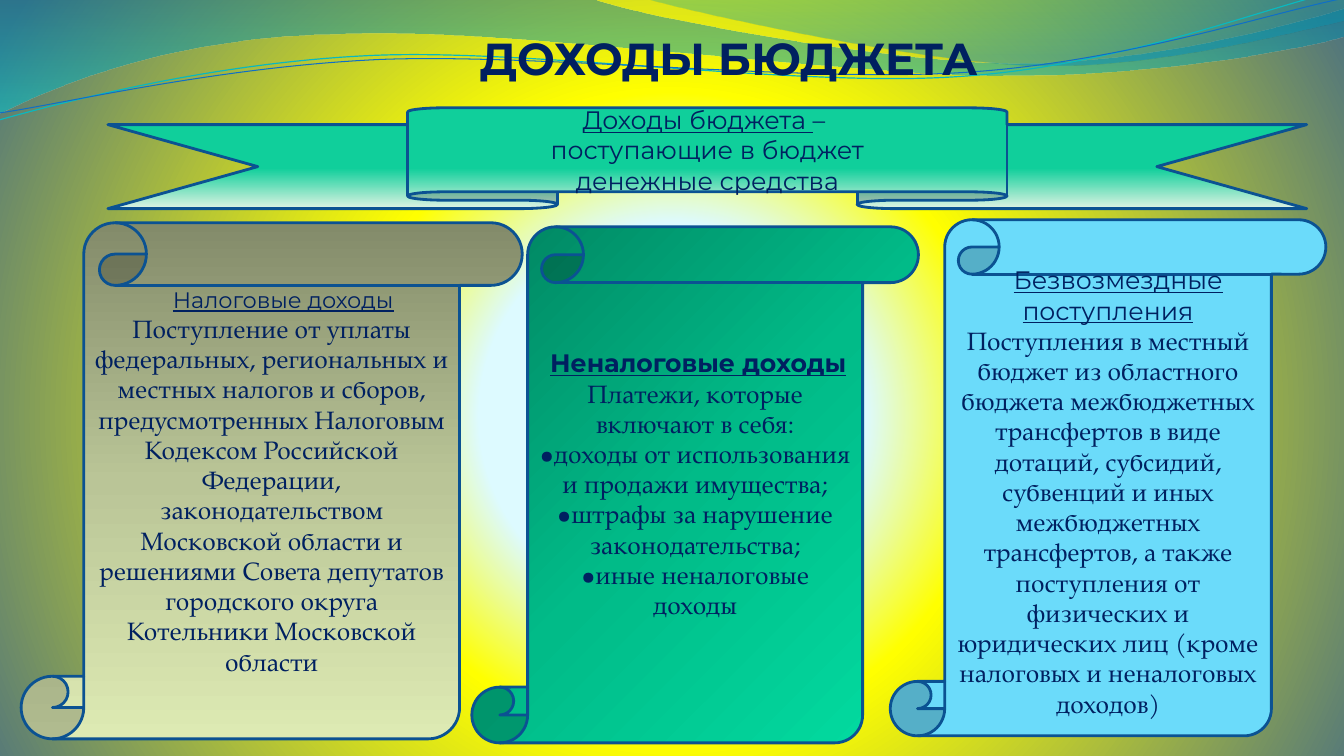
from dataclasses import dataclass
from typing import Optional

import lxml.etree
import pptx
import pptx.dml.color
import pptx.enum.shapes
import pptx.enum.text
import pptx.oxml
import pptx.oxml.ns
import pptx.util

Inches = pptx.util.Inches
SHAPES = pptx.enum.shapes.MSO_SHAPE
ALIGN = pptx.enum.text.PP_ALIGN
ANCHOR = pptx.enum.text.MSO_ANCHOR
qn = pptx.oxml.ns.qn

COLORS = {"navy": "002060", "outline": "0B5292", "sky": "6BDBFA",
          "teal_line": "0AB8BF", "blue_line": "0F6FC6"}
HEADING_FONT = "Montserrat"
BODY_FONT = "TeX Gyre Pagella"

Point = tuple[float, float]


@dataclass
class Stop:
    position: int
    color: str
    alpha: int = 100


@dataclass
class Wave:
    start: Point
    segments: list[tuple[float, ...]]  # two numbers: line; six: Bezier curve
    stops: Optional[list[Stop]] = None
    line: str = ""
    width: float = 0


@dataclass
class Span:
    text: str
    underline: bool = False


@dataclass
class Para:
    spans: list[Span]
    font: str = BODY_FONT
    size: int = 18
    bold: bool = False
    indent: float = 0


@dataclass
class Panel:
    preset: SHAPES
    place: tuple[float, float, float, float]
    paras: list[Para]
    stops: Optional[list[Stop]] = None
    angle: int = 90
    fill: str = ""
    bottom_inset: float = 0.05


WAVES = [
    Wave((0, 0), [(5.87, -0.01), (6.34, 0.17, 8.85, 0.63, 10.11, 0.63),
                  (11.38, 0.63, 12.78, 0.26, 13.33, 0.09), (13.35, 0.36),
                  (13.11, 0.44, 11.6, 0.76, 9.94, 0.75),
                  (8.29, 0.75, 5.09, 0.28, 3.43, 0.34),
                  (1.72, 0.36, 0.61, 0.83, -0.01, 1.13), (0, 0)],
         [Stop(0, "0074A1", 45), Stop(100, "00C6CF", 55)]),
    Wave((6.39, -0.01), [(6.79, 0.11, 9.09, 0.62, 10.25, 0.65),
                         (11.41, 0.69, 12.82, 0.32, 13.33, 0.21), (13.33, 0),
                         (6.39, -0.01)],
         [Stop(0, "00A1A9", 30), Stop(80, "008BBF", 45)]),
    Wave((-0.01, 1.19), [(0.64, 1.01, 2.11, 0.62, 3.69, 0.55),
                         (5.27, 0.48, 7.9, 0.87, 9.5, 0.76),
                         (11.1, 0.66, 12.52, 0.08, 13.31, -0.1)],
         line="teal_line", width=0.85),
    Wave((0, 1.12), [(0.63, 1.03, 2.18, 0.66, 3.78, 0.59),
                     (5.37, 0.53, 7.96, 0.82, 9.55, 0.72),
                     (11.15, 0.62, 12.55, 0.14, 13.34, -0.02)],
         line="blue_line", width=0.75),
]

PANELS = [
    Panel(SHAPES.UP_RIBBON, (1.07, 1.07, 11.89, 1),
          [Para([Span("Доходы бюджета ", True), Span("– ")], HEADING_FONT),
           Para([Span("поступающие в бюджет")], HEADING_FONT),
           Para([Span("денежные средства")], HEADING_FONT)],
          [Stop(0, "10CF9B"), Stop(60, "10CF9B"), Stop(100, "DFF3E3")]),
    Panel(SHAPES.VERTICAL_SCROLL, (0.21, 2.21, 4.97, 5.12),
          [Para([Span("Налоговые доходы", True)], HEADING_FONT, 16, indent=0.23),
           Para([Span("Поступление от уплаты федеральных, региональных и местных "
                      "налогов и сборов, предусмотренных Налоговым Кодексом "
                      "Российской Федерации, законодательством Московской области "
                      "и решениями Совета депутатов городского округа Котельники "
                      "Московской области")])],
          [Stop(0, "838B6A"), Stop(50, "BAC597"), Stop(100, "DDEAB3")],
          bottom_inset=0.35),
    Panel(SHAPES.VERTICAL_SCROLL, (4.68, 2.25, 4.43, 5.12),
          [Para([Span("Неналоговые доходы", True)], HEADING_FONT, bold=True,
                indent=0.06),
           Para([Span("Платежи, которые включают в себя:")]),
           Para([Span("•доходы от использования и продажи имущества;")]),
           Para([Span("•штрафы за нарушение законодательства;")]),
           Para([Span("•иные неналоговые доходы")])],
          [Stop(0, "018360"), Stop(50, "01BB88"), Stop(100, "02DDA2")],
          angle=45, bottom_inset=0.35),
    Panel(SHAPES.VERTICAL_SCROLL, (8.83, 2.18, 4.32, 5.12),
          [Para([Span("Безвозмездные поступления", True)], HEADING_FONT, indent=0.2),
           Para([Span("Поступления в местный бюджет из областного бюджета "
                      "межбюджетных трансфертов в виде дотаций, субсидий, субвенций "
                      "и иных межбюджетных трансфертов, а также поступления от "
                      "физических и юридических лиц (кроме налоговых и неналоговых "
                      "доходов)")])],
          fill="sky"),
]


def rgb(name: str) -> pptx.dml.color.RGBColor:
    return pptx.dml.color.RGBColor.from_string(COLORS[name])


def set_gradient(owner, fill, stops: list[Stop], angle: Optional[int] = None) -> None:
    """Fill with the stops: linear at a clockwise angle, or circular without one."""
    fill.gradient()
    stop_xml = "".join(
        f'<a:gs pos="{stop.position * 1000}"><a:srgbClr val="{stop.color}">'
        f'<a:alpha val="{stop.alpha * 1000}"/></a:srgbClr></a:gs>' for stop in stops)
    if angle is None:
        shade = ('<a:path path="circle"><a:fillToRect l="10000" t="110000" '
                 'r="10000" b="100000"/></a:path>')
    else:
        shade = f'<a:lin ang="{angle * 60000}" scaled="0"/>'
    gradient = pptx.oxml.parse_xml(
        f'<a:gradFill {pptx.oxml.ns.nsdecls("a")} rotWithShape="1">'
        f'<a:gsLst>{stop_xml}</a:gsLst>{shade}</a:gradFill>')
    present = owner.element.find(".//" + qn("a:gradFill"))
    present.getparent().replace(present, gradient)


def bend_segments(shape, segments: list[tuple[float, ...]]) -> None:
    """Join each three lines that stand for a curve into one Bezier segment."""
    lines = iter(shape.element.findall(".//" + qn("a:lnTo")))
    for segment in segments:
        first = next(lines)
        if len(segment) == 6:
            first.tag = qn("a:cubicBezTo")
            for line in (next(lines), next(lines)):
                first.append(line[0])
                line.getparent().remove(line)


def draw_wave(slide, wave: Wave) -> None:
    corners = [(Inches(segment[i]), Inches(segment[i + 1]))
               for segment in wave.segments for i in range(0, len(segment), 2)]
    builder = slide.shapes.build_freeform(*map(Inches, wave.start))
    builder.add_line_segments(corners, close=wave.stops is not None)
    shape = builder.convert_to_shape()
    bend_segments(shape, wave.segments)
    shape.shadow.inherit = False
    if wave.stops:
        set_gradient(shape, shape.fill, wave.stops, 90)
        shape.line.fill.background()
    else:
        shape.fill.background()
        shape.line.color.rgb = rgb(wave.line)
        shape.line.width = pptx.util.Pt(wave.width)


def write_para(paragraph, para: Para) -> None:
    paragraph.alignment = ALIGN.CENTER
    if para.indent:
        properties = paragraph._p.get_or_add_pPr()
        properties.set("marL", "0")
        properties.set("indent", str(Inches(para.indent)))
    font = paragraph.font
    font.name, font.size, font.bold = para.font, pptx.util.Pt(para.size), para.bold
    font.color.rgb = rgb("navy")
    for span in para.spans:
        run = paragraph.add_run()
        run.text = span.text
        if span.underline:
            run.font.underline = True


def draw_panel(slide, panel: Panel) -> None:
    shape = slide.shapes.add_shape(panel.preset, *map(Inches, panel.place))
    shape.shadow.inherit = False
    if panel.stops:
        set_gradient(shape, shape.fill, panel.stops, panel.angle)
    else:
        shape.fill.solid()
        shape.fill.fore_color.rgb = rgb(panel.fill)
    shape.line.color.rgb = rgb("outline")
    shape.line.width = pptx.util.Pt(2)
    frame = shape.text_frame
    frame.word_wrap = True
    frame.vertical_anchor = ANCHOR.MIDDLE
    frame.margin_bottom = Inches(panel.bottom_inset)
    for index, para in enumerate(panel.paras):
        write_para(frame.add_paragraph() if index else frame.paragraphs[0], para)


def draw_title(slide) -> None:
    """Format the title and bring it in front of the waves."""
    title = slide.shapes.title
    title.left, title.top, title.width, title.height = map(
        Inches, (2.82, 0.25, 8.82, 0.64))
    title.text_frame.word_wrap = True
    write_para(title.text_frame.paragraphs[0],
               Para([Span("ДОХОДЫ БЮДЖЕТА")], HEADING_FONT, 32, bold=True))
    title.element.getparent().append(title.element)


def main() -> None:
    deck = pptx.Presentation()
    deck.slide_width, deck.slide_height = Inches(13.33), Inches(7.5)
    slide = deck.slides.add_slide(deck.slide_layouts.get_by_name("Title Only"))
    set_gradient(slide, slide.background.fill,
                 [Stop(25, "DDFAFF"), Stop(42, "FFFF00"), Stop(100, "52767C")])
    for wave in WAVES:
        draw_wave(slide, wave)
    draw_title(slide)
    for panel in PANELS:
        draw_panel(slide, panel)
    deck.save("out.pptx")


if __name__ == "__main__":
    main()
